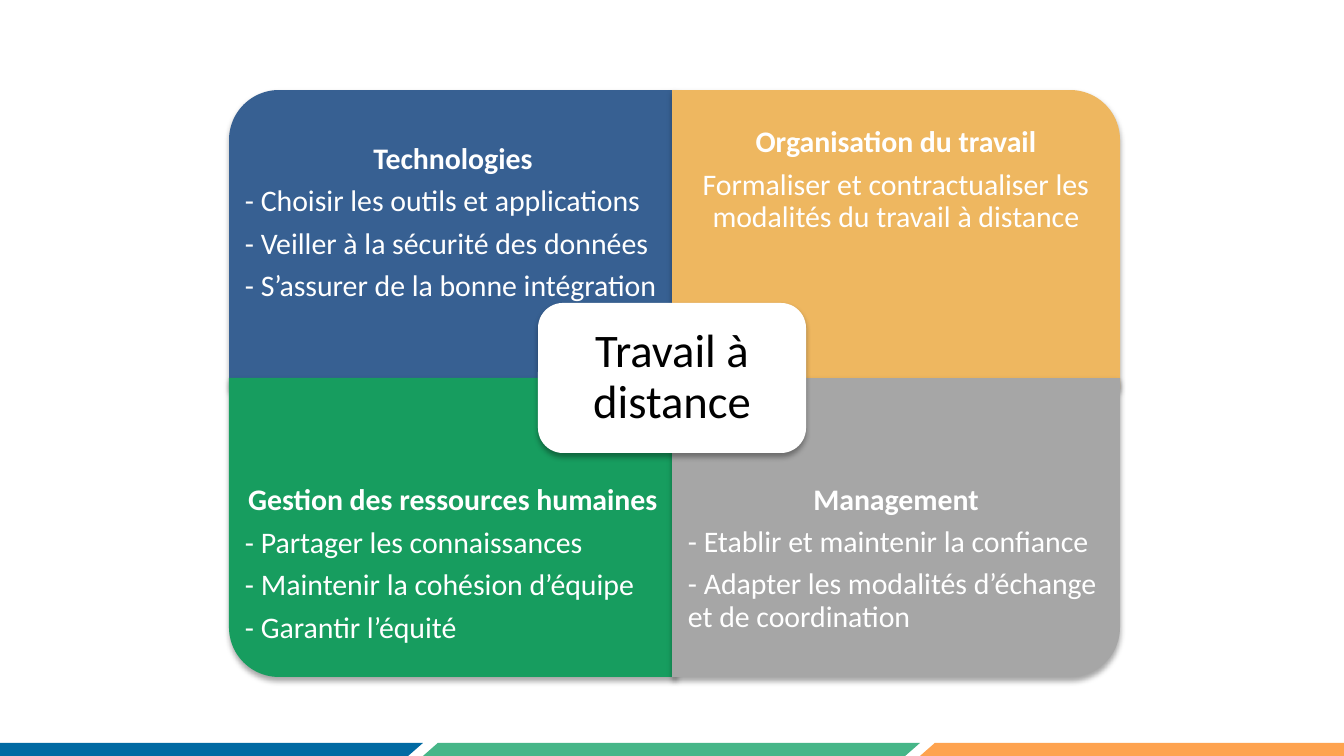
"""Builds a slide with four rounded quadrants around the theme of remote work."""
from lxml.etree import SubElement
from pptx import Presentation
from pptx.dml.color import RGBColor
from pptx.enum.shapes import MSO_SHAPE as Shape
from pptx.enum.text import MSO_ANCHOR as Anchor, PP_ALIGN as Align
from pptx.oxml.ns import qn
from pptx.util import Pt

PX = 914400 / 134.4
SLIDE_WIDTH, SLIDE_HEIGHT = 1344, 756
LEFT, RIGHT, TOP, BOTTOM = 229, 672, 90, 378
QUADRANT_WIDTH, QUADRANT_HEIGHT, TEXT_HEIGHT = 448, 299, 224
MARGIN = 16
FOOTER_TOP, FOOTER_HEIGHT, FOOTER_LEFT, FOOTER_STEP = 743, 13, -74, 497

FOOTER_COLORS = ["016AA3", "46B688", "FEA34F"]
QUADRANTS = [
    {"left": LEFT, "top": TOP, "rotation": 270, "color": "376092",
     "title": "Technologies", "align": Align.LEFT, "extra_top": 43, "extra_bottom": 0,
     "lines": ["- Choisir les outils et applications",
               "- Veiller à la sécurité des données",
               "- S’assurer de la bonne intégration"]},
    {"left": RIGHT, "top": TOP, "rotation": 0, "color": "EEB760",
     "title": "Organisation du travail", "align": Align.CENTER, "extra_top": 0, "extra_bottom": 43,
     "lines": ["Formaliser et contractualiser les modalités du travail à distance"]},
    {"left": LEFT, "top": BOTTOM, "rotation": 180, "color": "179D5F",
     "title": "Gestion des ressources humaines", "align": Align.LEFT, "extra_top": 0, "extra_bottom": 0,
     "lines": ["- Partager les connaissances",
               "- Maintenir la cohésion d’équipe",
               "- Garantir l’équité"]},
    {"left": RIGHT, "top": BOTTOM, "rotation": 90, "color": "A6A6A6",
     "title": "Management", "align": Align.LEFT, "extra_top": 0, "extra_bottom": 12,
     "lines": ["- Etablir et maintenir la confiance",
               "- Adapter les modalités d’échange et de coordination"]},
]
CENTER_TEXT, CENTER_BOX = "Travail à distance", (538, 303, 268, 150)


def px(*lengths):
    return [round(length * PX) for length in lengths]


def rgb(color):
    return RGBColor.from_string(color)


def add_block(slide, kind, box, color):
    shape = slide.shapes.add_shape(kind, *px(*box))
    shape.fill.solid()
    shape.fill.fore_color.rgb = rgb(color)
    shape.line.fill.background()
    shape.shadow.inherit = False
    return shape


def add_shadow(shape):
    effects = shape._element.spPr.find(qn("a:effectLst"))
    shadow = SubElement(effects, qn("a:outerShdw"), blurRad=str(Pt(3.1)), dist=str(Pt(1.8)),
                        dir="5400000", rotWithShape="0")
    black = SubElement(shadow, qn("a:srgbClr"), val="000000")
    SubElement(black, qn("a:alpha"), val="35000")


def set_frame(frame, left, top, right, bottom):
    frame.word_wrap = True
    frame.vertical_anchor = Anchor.MIDDLE
    (frame.margin_left, frame.margin_top,
     frame.margin_right, frame.margin_bottom) = px(left, top, right, bottom)


def write(paragraph, text, size, color, align, bold=False):
    paragraph.text = text
    paragraph.alignment = align
    paragraph.line_spacing = 0.9
    paragraph.space_after = Pt(5.5)
    font = paragraph.font
    font.name, font.size, font.bold = "Calibri", Pt(size), bold
    font.color.rgb = rgb(color)


def add_quadrant(slide, item):
    left, top = item["left"], item["top"]
    width, height = QUADRANT_WIDTH, QUADRANT_HEIGHT
    if item["rotation"] % 180:
        width, height = height, width
    box = (left + (QUADRANT_WIDTH - width) / 2, top + (QUADRANT_HEIGHT - height) / 2, width, height)
    shape = add_block(slide, Shape.ROUND_1_RECTANGLE, box, item["color"])
    shape.rotation = item["rotation"]
    add_shadow(shape)

    text_top = top if top == TOP else top + QUADRANT_HEIGHT - TEXT_HEIGHT
    frame = slide.shapes.add_textbox(*px(left, text_top, QUADRANT_WIDTH, TEXT_HEIGHT)).text_frame
    set_frame(frame, MARGIN, MARGIN + item["extra_top"], MARGIN, MARGIN + item["extra_bottom"])
    write(frame.paragraphs[0], item["title"], 16, "FFFFFF", Align.CENTER, True)
    for line in item["lines"]:
        write(frame.add_paragraph(), line, 16, "FFFFFF", item["align"])


def main():
    presentation = Presentation()
    presentation.slide_width, presentation.slide_height = px(SLIDE_WIDTH, SLIDE_HEIGHT)
    slide = presentation.slides.add_slide(presentation.slide_layouts[6])

    for index, color in enumerate(FOOTER_COLORS):
        box = (FOOTER_LEFT + index * FOOTER_STEP, FOOTER_TOP, FOOTER_STEP, FOOTER_HEIGHT)
        add_block(slide, Shape.PARALLELOGRAM, box, color).adjustments[0] = 1.14

    for item in QUADRANTS:
        add_quadrant(slide, item)

    center = add_block(slide, Shape.ROUNDED_RECTANGLE, CENTER_BOX, "FFFFFF")
    add_shadow(center)
    set_frame(center.text_frame, 20, 20, 20, 20)
    write(center.text_frame.paragraphs[0], CENTER_TEXT, 25, "000000", Align.CENTER)

    presentation.save("out.pptx")


if __name__ == "__main__":
    main()
